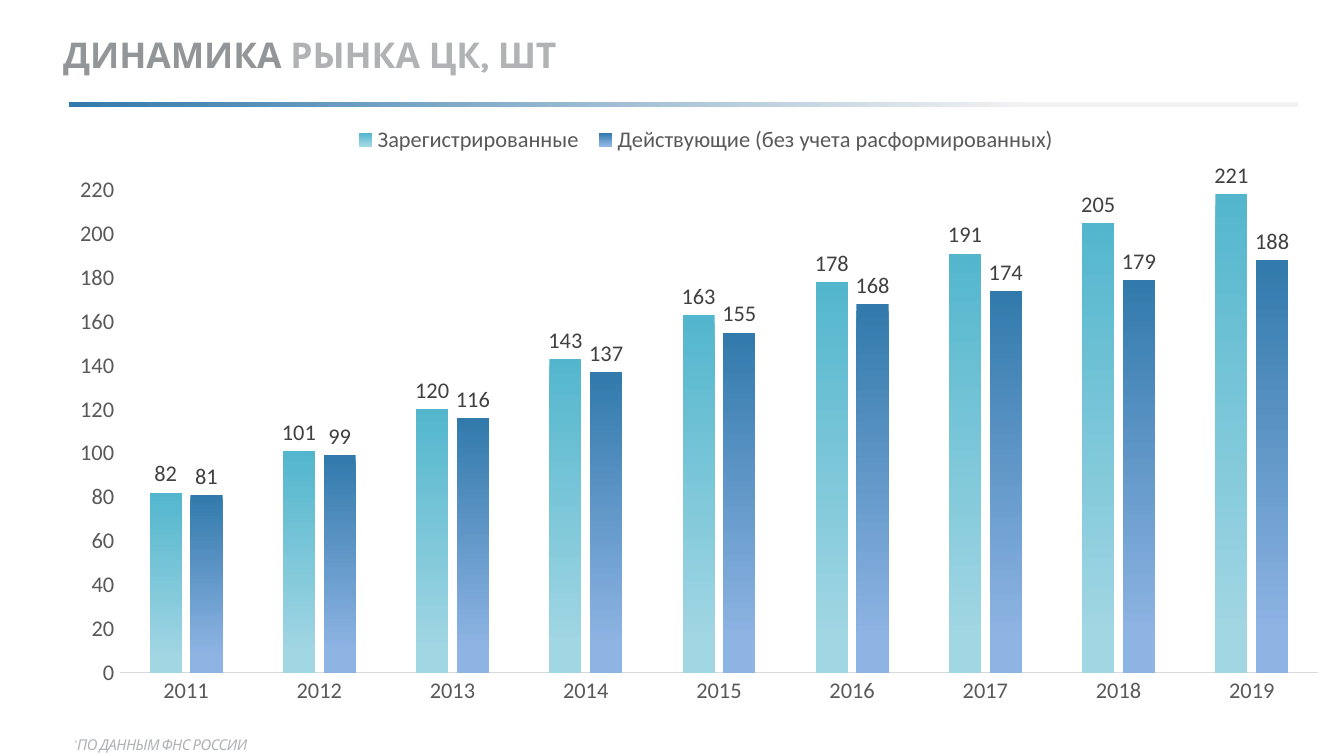
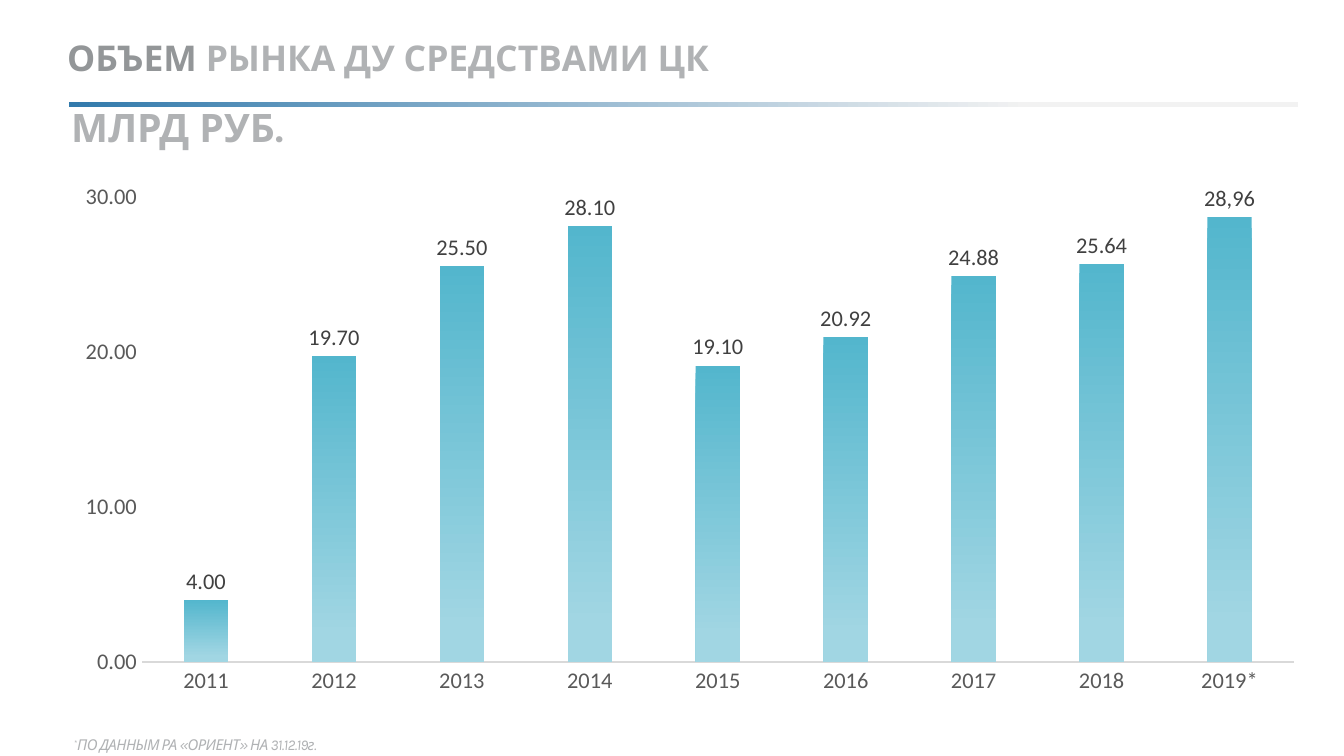
from lxml.etree import SubElement
from pptx import Presentation
from pptx.chart.data import CategoryChartData
from pptx.dml.color import RGBColor
from pptx.enum.chart import XL_CHART_TYPE, XL_LABEL_POSITION, XL_LEGEND_POSITION, XL_TICK_MARK
from pptx.enum.shapes import MSO_SHAPE
from pptx.enum.text import MSO_ANCHOR, MSO_AUTO_SIZE, PP_ALIGN
from pptx.oxml.ns import qn
from pptx.util import Inches, Pt

COLORS = {
    "title_strong": "939698",
    "title_soft": "B0B2B4",
    "band_start": "327AAC",
    "band_end": "F2F2F2",
    "axis_text": "595959",
    "axis_line": "D9D9D9",
    "label_text": "404040",
}
SERIES_GRADIENTS = [("53B6CD", "A1D6E3"), ("327AAC", "8EB4E3")]
YEARS = [str(year) for year in range(2011, 2020)]

TITLE = {"name": "Karla", "size": Pt(19), "bold": True}
UNIT = {"name": "Karla", "size": Pt(21), "bold": True}
FOOTNOTE = {"name": "Karla", "size": Pt(8), "bold": False, "italic": True}
CHART_TEXT = {"name": "Calibri", "size": Pt(12), "bold": False}


def set_attributes(target, values):
    for name, value in values.items():
        setattr(target, name, value)


def format_font(font, values, color):
    set_attributes(font, values)
    font.color.rgb = RGBColor.from_string(COLORS[color])


def fill_gradient(fill, stops, angle):
    fill.gradient()
    fill.gradient_angle = angle
    for stop, (position, color) in zip(fill.gradient_stops, stops):
        stop.position = position
        stop.color.rgb = RGBColor.from_string(color)


def write_text(shape, runs, values, margins, indent=0, wrap=True):
    """Fill a shape with one left-aligned paragraph of (text, color) runs."""
    frame = shape.text_frame
    names = ("margin_left", "margin_top", "margin_right", "margin_bottom")
    set_attributes(frame, dict(zip(names, map(Inches, margins))))
    set_attributes(frame, {"word_wrap": wrap, "auto_size": MSO_AUTO_SIZE.SHAPE_TO_FIT_TEXT})
    paragraph = frame.paragraphs[0]
    paragraph.alignment = PP_ALIGN.LEFT
    properties = paragraph._p.get_or_add_pPr()
    properties.set("marL", str(Inches(indent)))
    properties.set("indent", "0")
    for text, color in runs:
        run = paragraph.add_run()
        run.text = text
        format_font(run.font, values, color)
    return paragraph


def add_band(slide, box):
    """Gradient rule under the title, kept on the layout that both slides use."""
    band = slide.shapes.add_shape(MSO_SHAPE.RECTANGLE, *map(Inches, box))
    band.shadow.inherit = False
    band.line.fill.background()
    stops = [(0.22, COLORS["band_end"]), (1, COLORS["band_start"])]
    fill_gradient(band.fill, stops, 180)
    slide.slide_layout.shapes.element.append(band.element)


def add_title(slide, box, strong, soft, anchor, line_spacing):
    title = slide.shapes.title
    set_attributes(title, dict(zip(("left", "top", "width", "height"), map(Inches, box))))
    runs = [(strong + " ", "title_strong"), (soft, "title_soft")]
    paragraph = write_text(title, runs, TITLE, (0, 0.01, 0, 0), 0.01)
    paragraph.line_spacing = line_spacing
    title.text_frame.vertical_anchor = anchor


def add_footnote(slide, box, text):
    note = slide.shapes.add_textbox(*map(Inches, box))
    runs = [("*", "title_soft"), (text, "title_soft")]
    paragraph = write_text(note, runs, FOOTNOTE, (0, 0.01, 0, 0), 0.04)
    for run, baseline in zip(paragraph.runs, ("23000", "0")):
        properties = run._r.get_or_add_rPr()
        properties.set("spc", "-30")
        properties.set("baseline", baseline)


def add_unit(slide, box, text):
    unit = slide.shapes.add_textbox(*map(Inches, box))
    write_text(unit, [(text, "title_soft")], UNIT, (0.09, 0.04, 0.09, 0.04), wrap=False)


def place_plot(chart, plot_box):
    """Fix the inner plot area as fractions of the chart."""
    area = chart.element.find(".//" + qn("c:plotArea"))
    for old_layout in area.findall(qn("c:layout")):
        area.remove(old_layout)
    layout = SubElement(area, qn("c:layout"))
    area.insert(0, layout)
    manual = SubElement(layout, qn("c:manualLayout"))
    settings = [("layoutTarget", "inner"), ("xMode", "edge"), ("yMode", "edge")]
    settings += zip("xywh", plot_box)
    for tag, value in settings:
        SubElement(manual, qn("c:" + tag)).set("val", str(value))


def format_axes(chart, maximum, step, number_format):
    for axis in (chart.category_axis, chart.value_axis):
        set_attributes(axis, {
            "major_tick_mark": XL_TICK_MARK.NONE,
            "minor_tick_mark": XL_TICK_MARK.NONE,
            "has_major_gridlines": False,
        })
        format_font(axis.tick_labels.font, CHART_TEXT, "axis_text")
    line = chart.category_axis.format.line
    line.width = Pt(0.75)
    line.color.rgb = RGBColor.from_string(COLORS["axis_line"])
    value_axis = chart.value_axis
    value_axis.format.line.fill.background()
    set_attributes(value_axis, {"minimum_scale": 0, "maximum_scale": maximum, "major_unit": step})
    set_attributes(value_axis.tick_labels,
                   {"number_format": number_format, "number_format_is_linked": False})


def format_series(series, gradient, number_format):
    top, bottom = gradient
    fill_gradient(series.format.fill, [(0, top), (0.91, bottom)], 270)
    series.invert_if_negative = False
    labels = series.data_labels
    set_attributes(labels, {
        "show_value": True,
        "position": XL_LABEL_POSITION.OUTSIDE_END,
        "number_format": number_format,
        "number_format_is_linked": False,
    })
    format_font(labels.font, CHART_TEXT, "label_text")


def add_column_chart(slide, box, plot_box, categories, series_values, last_label,
                     maximum, step, number_format="General"):
    data = CategoryChartData()
    data.categories = categories
    for name, values in series_values.items():
        data.add_series(name, values)
    frame = slide.shapes.add_chart(XL_CHART_TYPE.COLUMN_CLUSTERED, *map(Inches, box), data)
    chart = frame.chart
    set_attributes(chart.font, {"name": "Calibri", "size": Pt(10)})
    chart.has_title = False
    chart.has_legend = len(series_values) > 1
    if chart.has_legend:
        set_attributes(chart.legend,
                       {"position": XL_LEGEND_POSITION.TOP, "include_in_layout": False})
        format_font(chart.legend.font, CHART_TEXT, "axis_text")
    plot = chart.plots[0]
    set_attributes(plot, {"gap_width": 188, "overlap": -27, "vary_by_categories": False})
    format_axes(chart, maximum, step, number_format)
    for series, gradient in zip(plot.series, SERIES_GRADIENTS):
        format_series(series, gradient, number_format)
    # The last column of the first series carries its own wording
    label = plot.series[0].points[len(categories) - 1].data_label
    run = label.text_frame.paragraphs[0].add_run()
    run.text = last_label
    format_font(run.font, CHART_TEXT, "label_text")
    label.position = XL_LABEL_POSITION.OUTSIDE_END
    place_plot(chart, plot_box)


def build_count_slide(slide):
    add_title(slide, (0.46, 0.27, 4.04, 0.3), "ДИНАМИКА", "РЫНКА ЦК, ШТ",
              MSO_ANCHOR.MIDDLE, 0.9)
    add_footnote(slide, (0.51, 5.46, 3.75, 0.15), "ПО ДАННЫМ ФНС РОССИИ")
    series_values = {
        "Зарегистрированные ": (82, 101, 120, 143, 163, 178, 191, 205, 218),
        "Действующие (без учета расформированных)":
            (81, 99, 116, 137, 155, 168, 174, 179, 188),
    }
    add_column_chart(slide, (0.51, 0.83, 9.49, 4.49), (0.04, 0.13, 0.94, 0.8),
                     YEARS, series_values, "221", 220, 20)


def build_volume_slide(slide):
    add_title(slide, (0.49, 0.26, 5.99, 0.34), "ОБЪЕМ", "РЫНКА ДУ СРЕДСТВАМИ ЦК",
              MSO_ANCHOR.TOP, 1.0)
    add_footnote(slide, (0.51, 5.46, 9.15, 0.15), "ПО ДАННЫМ РА «ОРИЕНТ» НА 31.12.19г.")
    add_unit(slide, (0.44, 0.73, 1.76, 0.44), "МЛРД РУБ.")
    series_values = {"Series 1": (4, 19.7, 25.5, 28.1, 19.1, 20.92, 24.88, 25.64, 28.66)}
    add_column_chart(slide, (0.51, 1.03, 9.12, 4.33), (0.06, 0.1, 0.94, 0.8),
                     YEARS[:-1] + ["2019*"], series_values, "28,96", 30, 10, "0.00")


def main():
    presentation = Presentation()
    presentation.slide_width = Inches(10)
    presentation.slide_height = Inches(10) * 9 // 16
    title_only = presentation.slide_layouts[5]
    builders = (build_count_slide, build_volume_slide)
    slides = [presentation.slides.add_slide(title_only) for _ in builders]
    add_band(slides[0], (0.51, 0.76, 9.15, 0.04))
    for build, slide in zip(builders, slides):
        build(slide)
    presentation.save("out.pptx")


if __name__ == "__main__":
    main()
